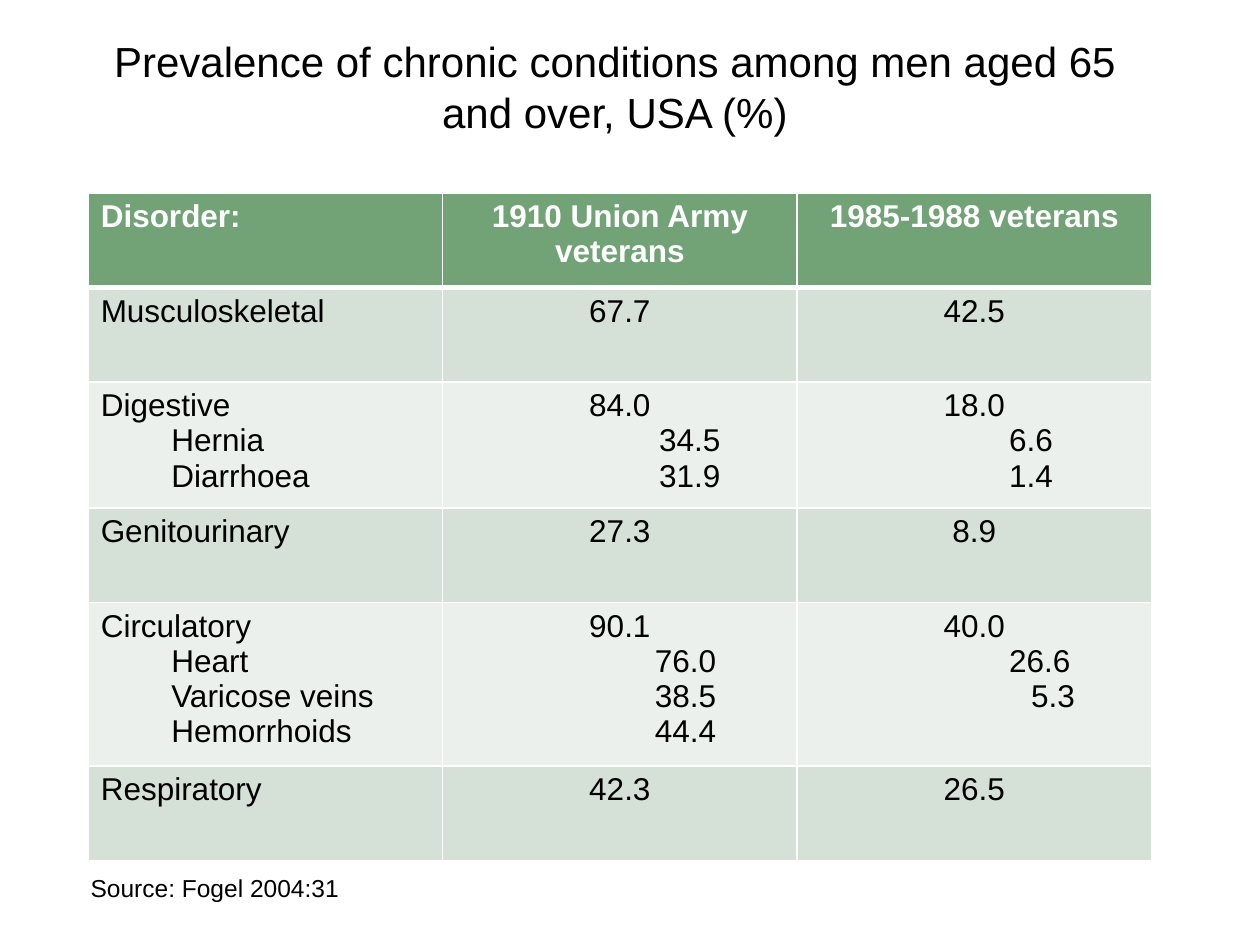
from lxml import etree
from pptx import Presentation
from pptx.dml.color import RGBColor
from pptx.enum.text import MSO_ANCHOR, PP_ALIGN
from pptx.oxml.ns import qn
from pptx.util import Inches, Pt

CENTER, LEFT = PP_ALIGN.CENTER, PP_ALIGN.LEFT
MIDDLE = MSO_ANCHOR.MIDDLE
TITLE_ONLY = 5
FONT = "Arial"
COLORS = {"white": "FFFFFF", "black": "000000", "head": "72A376",
          "dark": "D5E0D6", "light": "EBF0EC"}

HEADS = ["Disorder:", "1910 Union Army veterans", "1985-1988 veterans"]
# Each cell lists its lines; a pair is a sub-item with its indent in inches
ROWS = [
    [["Musculoskeletal"], ["67.7"], ["42.5"]],
    [["Digestive", ("Hernia", 0.56), ("Diarrhoea", 0.56)],
     ["84.0", ("34.5", 1.11), ("31.9", 1.11)],
     ["18.0", ("6.6", 0.9), ("1.4", 0.9)]],
    [["Genitourinary"], ["27.3"], ["8.9"]],
    [["Circulatory", ("Heart", 0.56), ("Varicose veins", 0.56),
      ("Hemorrhoids", 0.56)],
     ["90.1", ("76.0", 1.04), ("38.5", 1.04), ("44.4", 1.04)],
     ["40.0", ("26.6", 1.04), ("5.3", 1.25)]],
    [["Respiratory"], ["42.3"], ["26.5"]],
]
HEIGHTS = [0.75, 0.75, 1, 0.75, 1.3, 0.75]


def rgb(name):
    return RGBColor.from_string(COLORS[name])


def style(para, size, color="black", bold=False, align=LEFT):
    font = para.font
    font.name, font.size, font.bold = FONT, Pt(size), bold
    font.color.rgb = rgb(color)
    para.alignment = align


def set_lines(cell, lines, **look):
    frame = cell.text_frame
    for i, line in enumerate(lines):
        text, indent = line if isinstance(line, tuple) else (line, 0)
        para = frame.add_paragraph() if i else frame.paragraphs[0]
        para.text = text
        style(para, 18, **look)
        if indent:
            props = para._p.get_or_add_pPr()
            props.set("marL", str(Inches(indent)))
            props.set("indent", "0")


def set_edges(cell, top, bottom):
    props = cell._tc.get_or_add_tcPr()
    for side, width in (("L", 1), ("R", 1), ("T", top), ("B", bottom)):
        line = etree.SubElement(props, qn(f"a:ln{side}"), w=str(Pt(width)))
        fill = etree.SubElement(line, qn("a:solidFill"))
        etree.SubElement(fill, qn("a:srgbClr"), val=COLORS["white"])


def add_title(slide, x, y, w, h):
    title = slide.shapes.title
    title.left, title.top, title.width, title.height = map(Inches, (x, y, w, h))
    frame = title.text_frame
    frame.text = "Prevalence of chronic conditions among men aged 65 and over, USA (%)"
    frame.word_wrap = True
    frame.vertical_anchor = MIDDLE
    style(frame.paragraphs[0], 24, align=CENTER)


def add_grid(slide, x, y, w, h):
    data = [[[head] for head in HEADS]] + ROWS
    table = slide.shapes.add_table(len(data), len(HEADS),
                                   *map(Inches, (x, y, w, h))).table
    for col in table.columns:
        col.width = Inches(w / len(HEADS))
    for r, (row, height) in enumerate(zip(data, HEIGHTS)):
        table.rows[r].height = Inches(height)
        head = r == 0
        fill = "head" if head else ("dark" if r % 2 else "light")
        for c, lines in enumerate(row):
            cell = table.cell(r, c)
            set_lines(cell, lines, color="white" if head else "black",
                      bold=head, align=CENTER if c else LEFT)
            set_edges(cell, 3 if r == 1 else 1, 3 if head else 1)
            cell.fill.solid()
            cell.fill.fore_color.rgb = rgb(fill)


def add_source(slide, x, y, w, h):
    frame = slide.shapes.add_textbox(*map(Inches, (x, y, w, h))).text_frame
    frame.word_wrap = True
    frame.text = "Source: Fogel 2004:31"
    style(frame.paragraphs[0], 14)


def main():
    deck = Presentation()
    deck.slide_width, deck.slide_height = Inches(10), Inches(7.5)
    slide = deck.slides.add_slide(deck.slide_layouts[TITLE_ONLY])
    add_title(slide, 0.62, 0.23, 8.52, 0.91)
    add_grid(slide, 0.7, 1.53, 8.44, sum(HEIGHTS))
    add_source(slide, 0.62, 6.88, 2.75, 0.34)
    deck.save("out.pptx")


if __name__ == "__main__":
    main()
